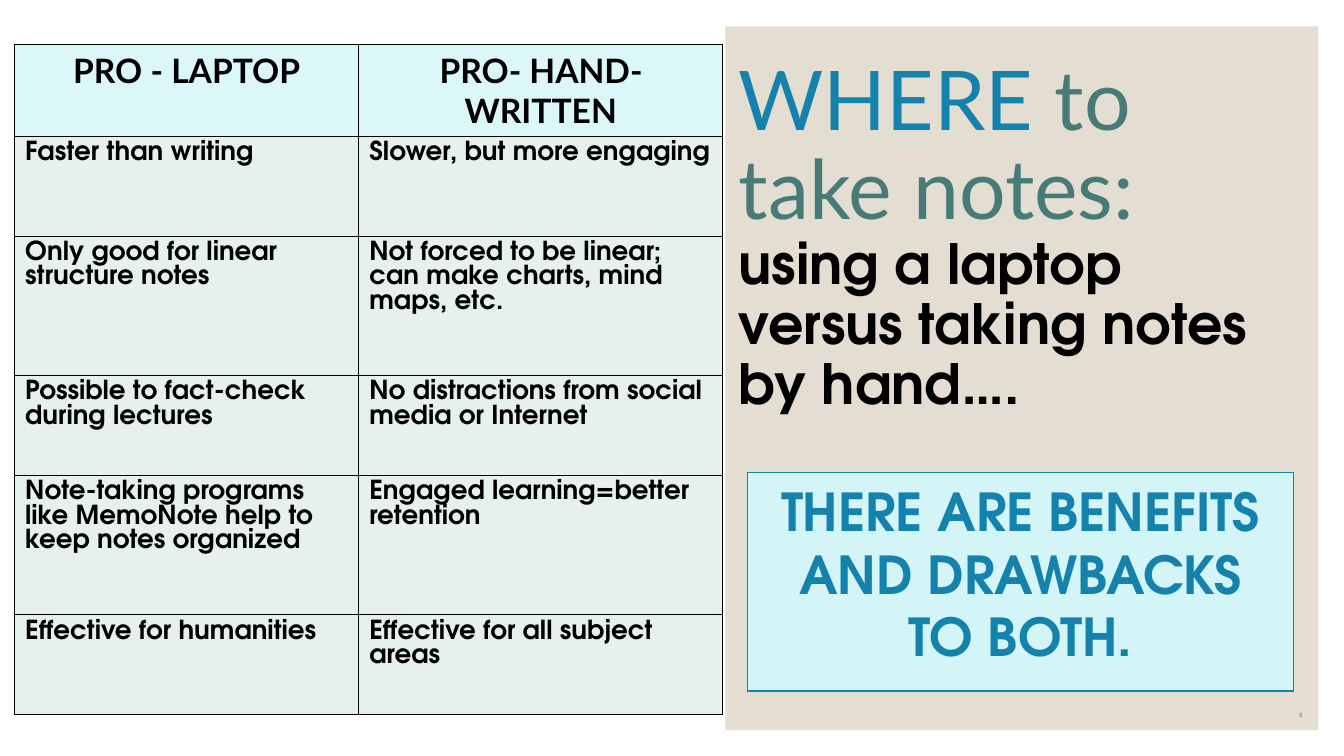
import pptx
import pptx.util
import pptx.dml.color
import pptx.enum.shapes
import pptx.enum.text
import pptx.oxml
import pptx.oxml.ns

Pt = pptx.util.Pt
ALIGN = pptx.enum.text.PP_ALIGN
ANCHOR = pptx.enum.text.MSO_ANCHOR

# Content
HEADING_FONT, BODY_FONT = "Lato", "TeX Gyre Adventor"
COLORS = {
    "white": "FFFFFF", "black": "000000", "sand": "E3DED1", "blue": "1482AC",
    "teal": "487B78", "gray": "404040", "aqua": "D4F5F7",
    "header": "7DE2E7", "body": "A1C8C5",
}
ROWS = [
    ("PRO - LAPTOP", "PRO- HAND-WRITTEN"),
    ("Faster than writing", "Slower, but more engaging"),
    ("Only good for linear structure notes",
     "Not forced to be linear; can make charts, mind maps, etc."),
    ("Possible to fact-check during lectures",
     "No distractions from social media or Internet"),
    ("Note-taking programs like MemoNote help to keep notes organized",
     "Engaged learning=better retention"),
    ("Effective for humanities", "Effective for all subject areas"),
]
COLUMN_WIDTHS = (184.4, 195)
ROW_HEIGHTS = (49, 53.6, 74.6, 53.6, 74.6, 53.6)
CELL_OPACITY = 27


def rgb(name):
    return pptx.dml.color.RGBColor.from_string(COLORS[name])


def write(paragraph, text, font=BODY_FONT, size=14, color="black", bold=False,
          align=ALIGN.LEFT, line_spacing=None, space_after=0):
    paragraph.alignment = align
    paragraph.space_after = Pt(space_after)
    if line_spacing:
        paragraph.line_spacing = line_spacing
    run = paragraph.add_run()
    run.text = text
    run.font.name = font
    run.font.size = Pt(size)
    run.font.bold = bold
    run.font.color.rgb = rgb(color)


def add_rectangle(slide, box, fill, line=None):
    shape = slide.shapes.add_shape(
        pptx.enum.shapes.MSO_SHAPE.RECTANGLE, *map(Pt, box))
    shape.shadow.inherit = False
    shape.fill.solid()
    shape.fill.fore_color.rgb = rgb(fill)
    if line:
        shape.line.color.rgb = rgb(line)
        shape.line.width = Pt(0.75)
    else:
        shape.line.fill.background()
    return shape


def add_text_frame(slide, box, anchor=ANCHOR.TOP):
    frame = slide.shapes.add_textbox(*map(Pt, box)).text_frame
    frame.word_wrap = True
    frame.vertical_anchor = anchor
    return frame


def style_cell(cell, fill):
    cell.margin_left = cell.margin_right = Pt(5.7)
    cell.margin_top = cell.margin_bottom = Pt(2.8)
    cell.fill.solid()
    cell.fill.fore_color.rgb = rgb(fill)
    properties = cell._tc.get_or_add_tcPr()
    color = properties.find(".//" + pptx.oxml.ns.qn("a:srgbClr"))
    color.append(pptx.oxml.parse_xml(
        f'<a:alpha {pptx.oxml.ns.nsdecls("a")} val="{CELL_OPACITY * 1000}"/>'))
    # Borders come before the fill
    for index, side in enumerate(("lnL", "lnR", "lnT", "lnB")):
        properties.insert(index, pptx.oxml.parse_xml(
            f'<a:{side} {pptx.oxml.ns.nsdecls("a")} w="{Pt(0.75)}"><a:solidFill>'
            f'<a:srgbClr val="{COLORS["black"]}"/></a:solidFill></a:{side}>'))


def add_comparison_table(slide):
    table = slide.shapes.add_table(
        len(ROWS), len(COLUMN_WIDTHS), Pt(7.8), Pt(24),
        Pt(sum(COLUMN_WIDTHS)), Pt(sum(ROW_HEIGHTS))).table
    table.first_row = table.horz_banding = False
    for column, width in zip(table.columns, COLUMN_WIDTHS):
        column.width = Pt(width)
    for row, height, texts in zip(table.rows, ROW_HEIGHTS, ROWS):
        row.height = Pt(height)
        is_header = texts is ROWS[0]
        for cell, text in zip(row.cells, texts):
            style_cell(cell, "header" if is_header else "body")
            paragraph = cell.text_frame.paragraphs[0]
            if is_header:
                write(paragraph, text, font=HEADING_FONT, size=18, bold=True,
                      align=ALIGN.CENTER)
            else:
                write(paragraph, text, bold=True)


def main():
    presentation = pptx.Presentation()
    presentation.slide_width, presentation.slide_height = Pt(720), Pt(405)
    slide = presentation.slides.add_slide(presentation.slide_layouts[6])

    # Sand panel, with the left part covered in white
    add_rectangle(slide, (13.7, 14.2, 692.6, 377), "sand")
    add_rectangle(slide, (0, 0, 388.6, 405), "white")

    # Title
    title = add_text_frame(slide, (388.6, 17.3, 316.1, 222.5))
    title.margin_top = Pt(14.4)
    heading = title.paragraphs[0]
    for text, color in (("WHERE", "blue"), (" to take notes:", "teal")):
        write(heading, text, font=HEADING_FONT, size=44.1, color=color,
              line_spacing=0.9)
    write(title.add_paragraph(), "using a laptop versus taking notes by hand….",
          size=29.7, bold=True, line_spacing=0.9)

    # Conclusion box
    conclusion = add_rectangle(
        slide, (400.3, 253.2, 292.8, 117), "aqua", "blue").text_frame
    conclusion.word_wrap = True
    conclusion.vertical_anchor = ANCHOR.TOP
    write(conclusion.paragraphs[0], "THERE ARE BENEFITS AND DRAWBACKS TO BOTH.",
          size=28, color="blue", bold=True, align=ALIGN.CENTER, space_after=6)

    # Slide number
    number = add_text_frame(slide, (618.5, 372.2, 86.4, 16.6), ANCHOR.BOTTOM)
    write(number.paragraphs[0], "5", size=3, color="gray", align=ALIGN.RIGHT,
          line_spacing=0.8)

    add_comparison_table(slide)
    presentation.save("out.pptx")


if __name__ == "__main__":
    main()
